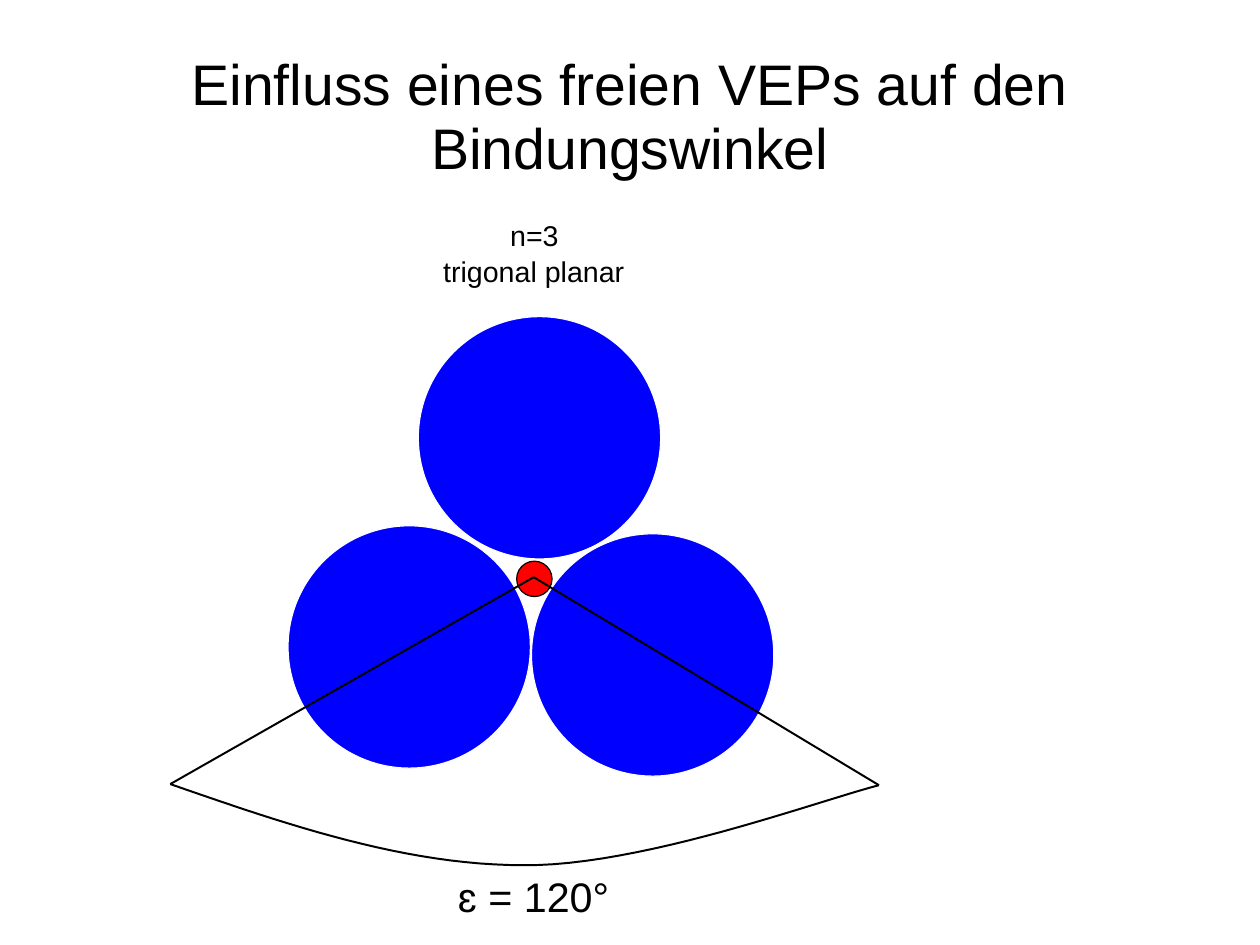
import pptx
import pptx.dml.color
import pptx.enum.shapes
import pptx.enum.text
import pptx.oxml.ns
import pptx.util
from lxml import etree
from pptx.util import Inches

BLACK = pptx.dml.color.RGBColor(0x00, 0x00, 0x00)
WHITE = pptx.dml.color.RGBColor(0xFF, 0xFF, 0xFF)
BLUE = pptx.dml.color.RGBColor(0x00, 0x00, 0xFF)
RED = pptx.dml.color.RGBColor(0xFF, 0x00, 0x00)

FONT = "Arial"
CM_PER_INCH = 2.54
SLIDE_WIDTH_CM, SLIDE_HEIGHT_CM = 28, 21
CLOUD_SIZE = 2.12
CLOUD_CORNERS = [(4.65, 4.67), (3.66, 2.77), (2.52, 4.6)]
NUCLEUS_SIZE = 0.31
VERTEX = (4.67, 5.05)
LEFT_END = (1.49, 6.86)
RIGHT_END = (7.69, 6.87)
# Two cubic curves that meet below the molecule
ARC_CURVES = [
    [LEFT_END, (2.52, 7.22), (3.55, 7.57), (4.58, 7.57)],
    [(4.58, 7.57), (5.61, 7.58), (7.15, 7.01), RIGHT_END],
]
ARC_STEPS = 24


def style_line(line, color, width):
    line.color.rgb = color
    line.width = pptx.util.Pt(width)


def write_text(frame, text, size, insets):
    """Fill the frame with one centred paragraph; insets are left, top, right, bottom."""
    frame.word_wrap = True
    frame.auto_size = pptx.enum.text.MSO_AUTO_SIZE.NONE
    left, top, right, bottom = insets
    frame.margin_left, frame.margin_top = Inches(left), Inches(top)
    frame.margin_right, frame.margin_bottom = Inches(right), Inches(bottom)
    paragraph = frame.paragraphs[0]
    paragraph.alignment = pptx.enum.text.PP_ALIGN.CENTER
    paragraph.line_spacing = 0.93
    run = paragraph.add_run()
    run.text = text
    run.font.name = FONT
    run.font.size = pptx.util.Pt(size)
    run.font.color.rgb = BLACK


def set_title(slide, text):
    title = slide.shapes.title
    title.left, title.top = Inches(0.55), Inches(0.33)
    title.width, title.height = Inches(9.92), Inches(1.38)
    title.text_frame.vertical_anchor = pptx.enum.text.MSO_ANCHOR.MIDDLE
    write_text(title.text_frame, text, 36, (0, 0.03, 0, 0))


def add_label(slide, text, size, left, top, width, height):
    label = slide.shapes.add_textbox(
        Inches(left), Inches(top), Inches(width), Inches(height))
    write_text(label.text_frame, text, size, (0.1, 0.07, 0.1, 0.05))


def add_circle(slide, left, top, diameter, fill, outline):
    circle = slide.shapes.add_shape(
        pptx.enum.shapes.MSO_SHAPE.OVAL,
        Inches(left), Inches(top), Inches(diameter), Inches(diameter))
    circle.shadow.inherit = False
    circle.fill.solid()
    circle.fill.fore_color.rgb = fill
    style_line(circle.line, outline, 0.75)


def add_bond_axis(slide, start, end):
    axis = slide.shapes.add_connector(
        pptx.enum.shapes.MSO_CONNECTOR.STRAIGHT,
        *(Inches(value) for value in start + end))
    style_line(axis.line, BLACK, 1.25)
    etree.SubElement(axis._element.spPr, pptx.oxml.ns.qn("a:effectLst"))


def curve_point(curve, t):
    """Return the point at t (0 to 1) on a cubic Bézier curve, in EMU."""
    weights = ((1 - t) ** 3, 3 * t * (1 - t) ** 2, 3 * t ** 2 * (1 - t), t ** 3)
    return tuple(
        Inches(sum(weight * point[i] for weight, point in zip(weights, curve)))
        for i in range(2))


def add_angle_arc(slide):
    points = [curve_point(curve, step / ARC_STEPS)
              for curve in ARC_CURVES for step in range(1, ARC_STEPS + 1)]
    builder = slide.shapes.build_freeform(*(Inches(value) for value in LEFT_END))
    builder.add_line_segments(points, close=False)
    arc = builder.convert_to_shape()
    arc.shadow.inherit = False
    arc.fill.background()
    style_line(arc.line, BLACK, 1.25)


def main():
    presentation = pptx.Presentation()
    presentation.slide_width = Inches(SLIDE_WIDTH_CM / CM_PER_INCH)
    presentation.slide_height = Inches(SLIDE_HEIGHT_CM / CM_PER_INCH)
    slide = presentation.slides.add_slide(presentation.slide_layouts[5])

    set_title(slide, "Einfluss eines freien VEPs auf den Bindungswinkel")
    for left, top in CLOUD_CORNERS:
        add_circle(slide, left, top, CLOUD_SIZE, BLUE, WHITE)
    add_circle(slide, 4.52, 4.91, NUCLEUS_SIZE, RED, BLACK)
    add_label(slide, "ɛ = 120°", 26, 3.49, 7.59, 2.36, 0.5)
    for end in (LEFT_END, RIGHT_END):
        add_bond_axis(slide, VERTEX, end)
    add_label(slide, "n=3", 18, 4.32, 1.86, 0.71, 0.38)
    add_label(slide, "trigonal planar", 18, 3.45, 2.18, 2.44, 0.38)
    add_angle_arc(slide)

    presentation.save("out.pptx")


if __name__ == "__main__":
    main()
